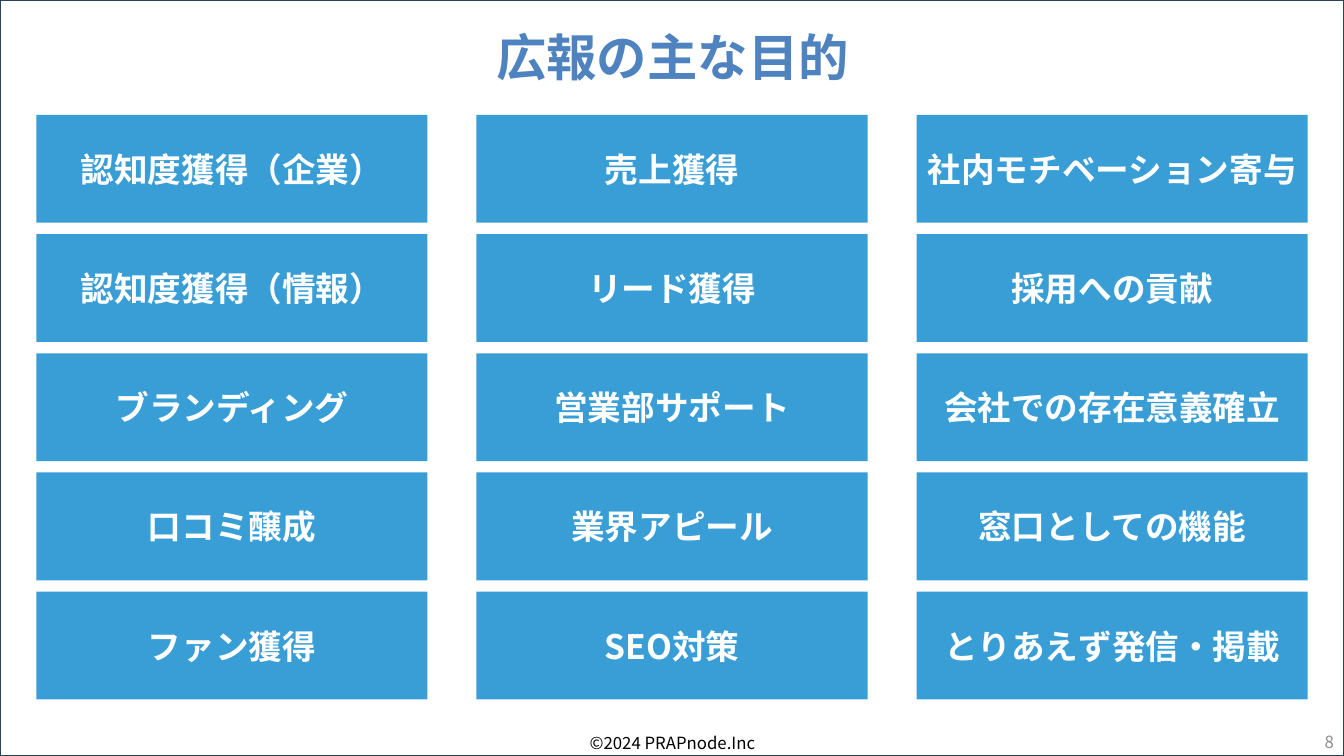
import pptx
import pptx.util
import pptx.dml.color
import pptx.enum.shapes
import pptx.enum.text
import pptx.oxml.ns
import lxml.etree

Inches = pptx.util.Inches
Pt = pptx.util.Pt
Align = pptx.enum.text.PP_ALIGN
Anchor = pptx.enum.text.MSO_ANCHOR


def color(hex_value):
    return pptx.dml.color.RGBColor.from_string(hex_value)


class PurposeSlide:
    font = "Noto Sans CJK JP"
    white = "FFFFFF"
    tile_blue = "399ED6"
    title_blue = "4F83BF"
    frame_navy = "28445D"

    def __init__(self, presentation):
        self.slide = presentation.slides.add_slide(presentation.slide_layouts[6])

    def set_wording(self, shape, wording, size, hex_value, bold=False,
                    align=Align.CENTER, anchor=Anchor.MIDDLE, spacing=1.0):
        frame = shape.text_frame
        frame.text = wording
        frame.word_wrap = True
        frame.vertical_anchor = anchor
        frame.margin_left = frame.margin_right = Inches(0.08)
        paragraph = frame.paragraphs[0]
        paragraph.alignment = align
        paragraph.line_spacing = spacing
        run = paragraph.runs[0]
        run.font.size = Pt(size)
        run.font.bold = bold
        run.font.color.rgb = color(hex_value)
        run.font.name = self.font
        east_asian = lxml.etree.SubElement(
            run._r.get_or_add_rPr(), pptx.oxml.ns.qn("a:ea"))
        east_asian.set("typeface", self.font)

    def rectangle(self, left, top, width, height, fill, line=None):
        shape = self.slide.shapes.add_shape(
            pptx.enum.shapes.MSO_SHAPE.RECTANGLE,
            Inches(left), Inches(top), Inches(width), Inches(height))
        shape.shadow.inherit = False
        shape.fill.solid()
        shape.fill.fore_color.rgb = color(fill)
        if line:
            shape.line.color.rgb = color(line)
            shape.line.width = Pt(1)
        else:
            shape.line.fill.background()
        return shape

    def tile(self, left, top, width, height, wording):
        shape = self.rectangle(left, top, width, height, self.tile_blue)
        self.set_wording(shape, wording, 24, self.white, bold=True)

    def label(self, left, top, width, height, wording, size, hex_value, **style):
        box = self.slide.shapes.add_textbox(
            Inches(left), Inches(top), Inches(width), Inches(height))
        self.set_wording(box, wording, size, hex_value, **style)


PURPOSES = [
    ["認知度獲得（企業）", "認知度獲得（情報）", "ブランディング", "口コミ醸成", "ファン獲得"],
    ["売上獲得", "リード獲得", "営業部サポート", "業界アピール", "SEO対策"],
    ["社内モチベーション寄与", "採用への貢献", "会社での存在意義確立",
     "窓口としての機能", "とりあえず発信・掲載"],
]
GRID_LEFT, GRID_RIGHT = 0.36, 12.97
GRID_TOP, GRID_BOTTOM = 1.14, 6.94
TILE_WIDTH, TILE_HEIGHT = 3.88, 1.07


def main():
    presentation = pptx.Presentation()
    presentation.slide_width = Inches(13.33)
    presentation.slide_height = Inches(7.5)
    page = PurposeSlide(presentation)

    page.rectangle(0, 0, 13.33, 7.5, page.white, page.frame_navy)
    page.label(1.62, 0.19, 10.1, 0.73, "広報の主な目的", 36, page.title_blue,
               bold=True, anchor=Anchor.BOTTOM, spacing=0.9)

    column_step = (GRID_RIGHT - GRID_LEFT - TILE_WIDTH) / (len(PURPOSES) - 1)
    row_step = (GRID_BOTTOM - GRID_TOP - TILE_HEIGHT) / (len(PURPOSES[0]) - 1)
    for column, purposes in enumerate(PURPOSES):
        for row, purpose in enumerate(purposes):
            page.tile(GRID_LEFT + column * column_step, GRID_TOP + row * row_step,
                      TILE_WIDTH, TILE_HEIGHT, purpose)

    page.label(4.42, 7.17, 4.5, 0.4, "©2024 PRAPnode.Inc", 12, "000000")
    page.label(10.31, 7.16, 3, 0.4, "8", 12, "8C8C8C", align=Align.RIGHT)
    presentation.save("out.pptx")


if __name__ == "__main__":
    main()
